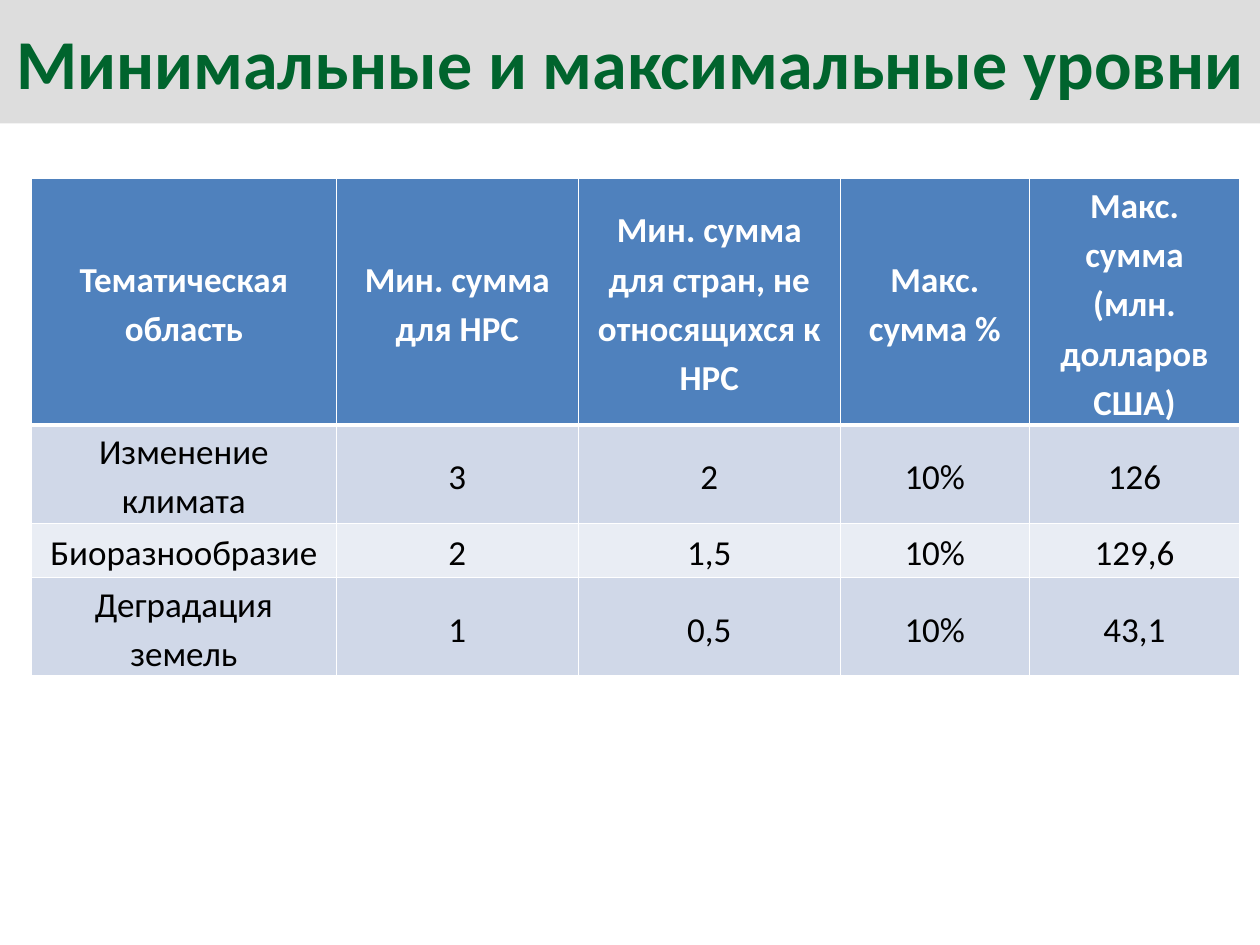
from lxml import etree
from pptx import Presentation
from pptx import util as u
from pptx.dml.color import RGBColor
from pptx.enum import text
from pptx.oxml import ns

GREEN = RGBColor(0x00, 0x64, 0x2D)
GREY = RGBColor(0xDD, 0xDD, 0xDD)
BLUE = RGBColor(0x4F, 0x81, 0xBD)
BAND_DARK = RGBColor(0xD0, 0xD8, 0xE8)
BAND_LIGHT = RGBColor(0xE9, 0xED, 0xF4)
WHITE = RGBColor(0xFF, 0xFF, 0xFF)
BLACK = RGBColor(0x00, 0x00, 0x00)

TITLE = "Минимальные и максимальные уровни"
ROWS = [
    ["Тематическая область", "Мин. сумма для НРС",
     "Мин. сумма для стран, не относящихся к НРС",
     "Макс. сумма %", "Макс. сумма\n(млн. долларов США)"],
    ["Изменение климата", "3", "2", "10%", "126"],
    ["Биоразнообразие", "2", "1,5", "10%", "129,6"],
    ["Деградация земель", "1", "0,5", "10%", "43,1"],
]
COL_WIDTHS = [174.24, 138.24, 149.76, 108, 120.24]
ROW_HEIGHTS = [36, 36, 31, 36]


class Deck:
    font = "Calibri"
    cell_format = {"margin_left": u.Pt(5), "margin_right": u.Pt(5),
                   "margin_top": 0, "margin_bottom": 0,
                   "vertical_anchor": text.MSO_ANCHOR.MIDDLE}

    def __init__(self, slide):
        self.s = slide

    def apply(self, obj, values):
        for name, value in values.items():
            setattr(obj, name, value)

    def fill(self, obj, color):
        obj.fill.solid()
        obj.fill.fore_color.rgb = color

    def add_text(self, tf, content, size, color, bold, spacing):
        tf.text = content
        for p in tf.paragraphs:
            self.apply(p, {"alignment": text.PP_ALIGN.CENTER,
                           "line_spacing": spacing})
            for r in p.runs:
                self.apply(r.font, {"name": self.font, "size": u.Pt(size),
                                    "bold": bold})
                r.font.color.rgb = color

    def title(self, content, width, height):
        sp = self.s.shapes.title
        self.apply(sp, {"left": 0, "top": 0, "width": u.Pt(width),
                        "height": u.Pt(height)})
        self.fill(sp, GREY)
        tf = sp.text_frame
        self.apply(tf, {"auto_size": text.MSO_AUTO_SIZE.NONE,
                        "vertical_anchor": text.MSO_ANCHOR.MIDDLE,
                        "word_wrap": True})
        self.add_text(tf, content, 40, GREEN, True, 1.0)

    def borders(self, cell, top, bottom):
        # Border lines come before the fill in the cell properties
        tc_pr = cell._tc.get_or_add_tcPr()
        widths = {"a:lnL": 1, "a:lnR": 1, "a:lnT": top, "a:lnB": bottom}
        for i, (tag, width) in enumerate(widths.items()):
            ln = etree.Element(ns.qn(tag), w=str(u.Pt(width)))
            solid = etree.SubElement(ln, ns.qn("a:solidFill"))
            etree.SubElement(solid, ns.qn("a:srgbClr"), val=str(WHITE))
            tc_pr.insert(i, ln)

    def table(self, left, top, rows, col_widths, row_heights):
        frame = self.s.shapes.add_table(
            len(rows), len(col_widths), u.Pt(left), u.Pt(top),
            u.Pt(sum(col_widths)), u.Pt(sum(row_heights)))
        tbl = frame.table
        for col, width in zip(tbl.columns, col_widths):
            col.width = u.Pt(width)
        for i, (row, height, values) in enumerate(
                zip(tbl.rows, row_heights, rows)):
            row.height = u.Pt(height)
            header = i == 0
            color = BLUE if header else BAND_DARK if i % 2 else BAND_LIGHT
            for cell, value in zip(row.cells, values):
                self.apply(cell, self.cell_format)
                self.fill(cell, color)
                self.borders(cell, 3 if i == 1 else 1, 3 if header else 1)
                self.add_text(cell.text_frame, value, 20,
                              WHITE if header else BLACK, header, 1.15)


def main():
    prs = Presentation()
    prs.slide_width, prs.slide_height = u.Pt(720), u.Pt(540)
    deck = Deck(prs.slides.add_slide(prs.slide_layouts[5]))

    # Heading band
    deck.title(TITLE, 720, 70.5)

    # Table of minimum and maximum amounts
    deck.table(18, 102, ROWS, COL_WIDTHS, ROW_HEIGHTS)

    prs.save("out.pptx")


if __name__ == "__main__":
    main()
